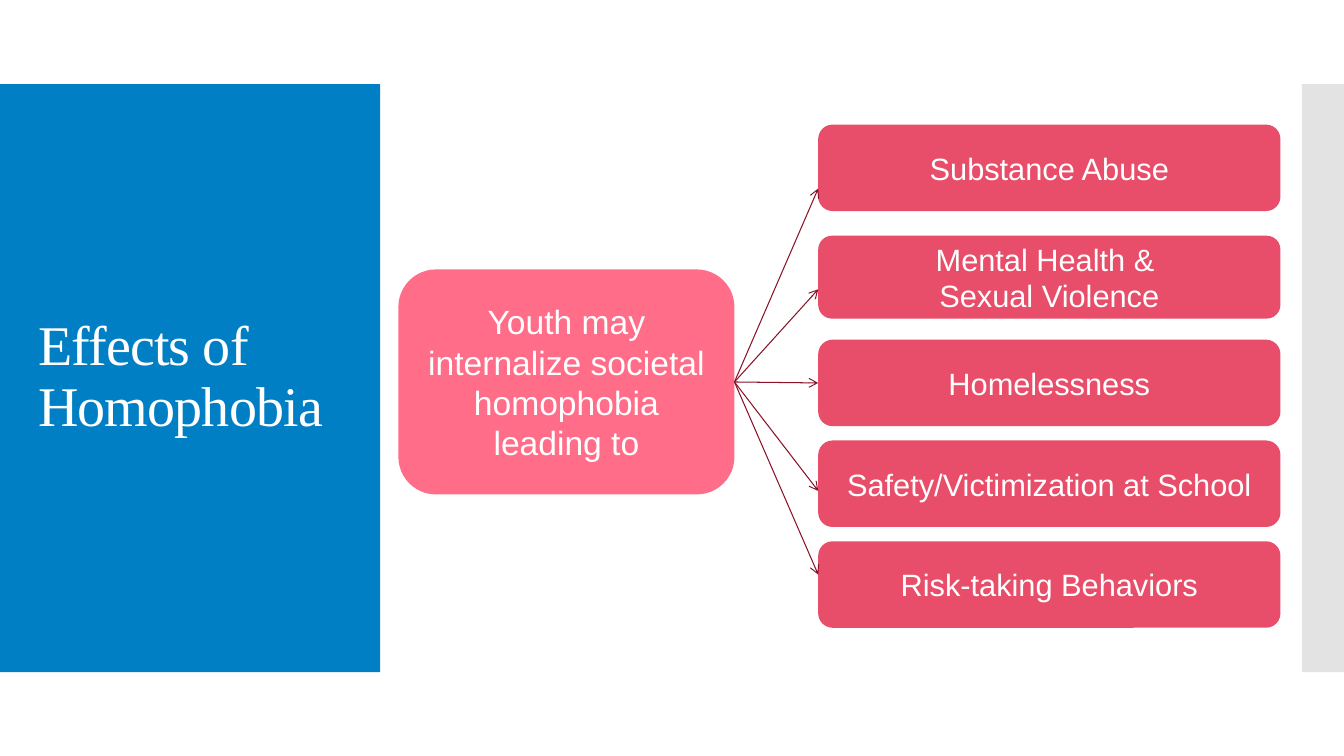
import pptx
import pptx.util
import pptx.dml.color
import pptx.enum.shapes
import pptx.enum.text
import pptx.oxml
import pptx.oxml.ns

Cm = pptx.util.Cm
Pt = pptx.util.Pt
SHAPE = pptx.enum.shapes.MSO_SHAPE
ALIGN = pptx.enum.text.PP_ALIGN

COLORS = {
    "panel": "007FC4",
    "edge": "C8C8C8",
    "cause": "FF6D88",
    "effect": "E84D69",
    "arrow": "891227",
    "text": "FFFFFF",
}

EFFECT_LEFT, EFFECT_WIDTH = 20.62, 11.65
EFFECTS = [
    (["Substance Abuse"], 3.14, 2.18, 4.75),
    (["Mental Health & ", "Sexual Violence"], 5.94, 2.09, 7.29),
    (["Homelessness"], 8.56, 2.18, None),
    (["Safety/Victimization at School"], 11.1, 2.18, 12.37),
    (["Risk-taking Behaviors"], 13.64, 2.18, 14.48),
]


def rgb(name):
    return pptx.dml.color.RGBColor.from_string(COLORS[name])


def add_block(slide, kind, color, left, top, width, height):
    block = slide.shapes.add_shape(kind, Cm(left), Cm(top), Cm(width), Cm(height))
    block.shadow.inherit = False
    block.fill.solid()
    block.fill.fore_color.rgb = rgb(color)
    block.line.fill.background()
    return block


def write_text(block, lines, font_name, size, align):
    frame = block.text_frame
    frame.word_wrap = True
    frame.auto_size = pptx.enum.text.MSO_AUTO_SIZE.NONE
    frame.vertical_anchor = pptx.enum.text.MSO_ANCHOR.MIDDLE
    for number, line in enumerate(lines):
        paragraph = frame.add_paragraph() if number else frame.paragraphs[0]
        paragraph.alignment = align
        run = paragraph.add_run()
        run.text = line
        run.font.name = font_name
        run.font.size = Pt(size)
        run.font.color.rgb = rgb("text")


def add_bubble(slide, lines, color, size, left, top, width, height):
    bubble = add_block(slide, SHAPE.ROUNDED_RECTANGLE, color, left, top, width, height)
    write_text(bubble, lines, "Arial", size, ALIGN.CENTER)
    bubble.text_frame.margin_top = bubble.text_frame.margin_bottom = 0
    return bubble


def add_arrow(slide, cause, effect, end_y):
    arrow = slide.shapes.add_connector(
        pptx.enum.shapes.MSO_CONNECTOR.STRAIGHT,
        cause.left + cause.width, cause.top + cause.height // 2,
        effect.left, Cm(end_y or 0),
    )
    arrow.begin_connect(cause, 3)
    if end_y is None:
        arrow.end_connect(effect, 1)
    arrow.line.color.rgb = rgb("arrow")
    arrow.line.width = Pt(0.75)
    head = pptx.oxml.ns.qn("a:tailEnd")
    line = arrow.line._get_or_add_ln()
    line.append(line.makeelement(head, {"type": "arrow"}))
    properties = arrow.element.spPr
    properties.append(properties.makeelement(pptx.oxml.ns.qn("a:effectLst"), {}))


def add_title(slide):
    title = slide.shapes.title
    title.left, title.top = Cm(0.71), Cm(3.13)
    title.width, title.height = Cm(8.18), Cm(12.78)
    write_text(title, ["Effects of Homophobia"], "Times New Roman", 40, ALIGN.LEFT)
    heading = title.text_frame.paragraphs[0]
    heading.line_spacing = 0.9
    heading.runs[0].font._element.set("spc", "-60")
    return title


def add_side_panels(slide, title):
    panel = add_block(slide, SHAPE.RECTANGLE, "panel", 0, 2.12, 9.58, 14.82)
    edge = add_block(slide, SHAPE.RECTANGLE, "edge", 32.81, 2.12, 1.06, 14.82)
    edge_color = edge.element.spPr.find(".//" + pptx.oxml.ns.qn("a:srgbClr"))
    edge_color.append(
        edge_color.makeelement(pptx.oxml.ns.qn("a:alpha"), {"val": "50000"})
    )
    for band in (panel, edge):
        title.element.addprevious(band.element)


def main():
    deck = pptx.Presentation()
    deck.slide_width, deck.slide_height = Cm(33.87), Cm(19.05)
    slide = deck.slides.add_slide(deck.slide_layouts[5])
    title = add_title(slide)
    add_side_panels(slide, title)
    cause = add_bubble(
        slide, ["Youth may internalize societal homophobia leading to"],
        "cause", 24, 10.04, 6.79, 8.47, 5.67,
    )
    effects = [
        add_bubble(slide, lines, "effect", 22, EFFECT_LEFT, top, EFFECT_WIDTH, height)
        for lines, top, height, _ in EFFECTS
    ]
    for effect, (_, _, _, end_y) in zip(effects, EFFECTS):
        add_arrow(slide, cause, effect, end_y)
    deck.save("out.pptx")


if __name__ == "__main__":
    main()
